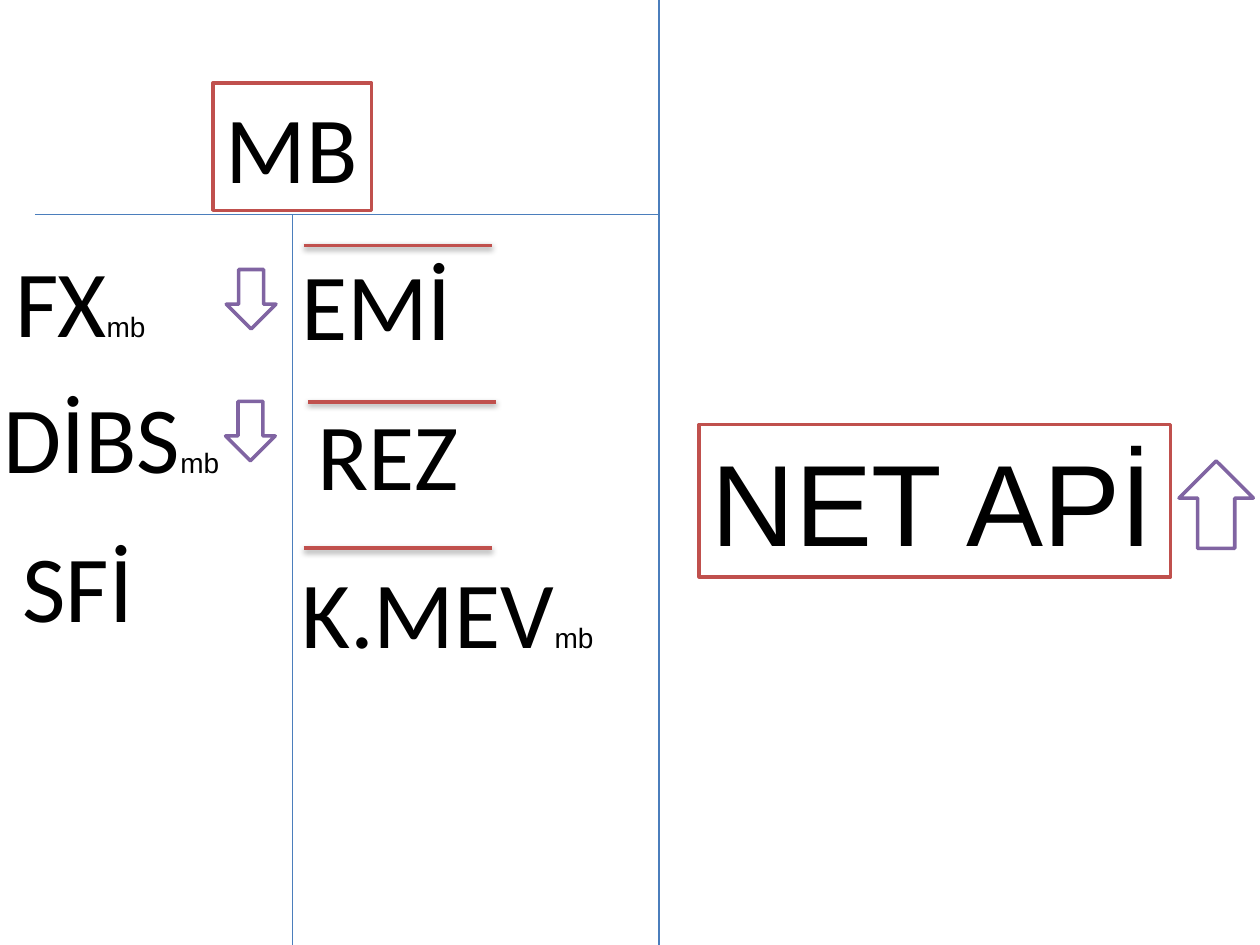
from dataclasses import dataclass

from lxml import etree
from pptx import Presentation
from pptx.dml.color import RGBColor
from pptx.enum.shapes import MSO_CONNECTOR, MSO_SHAPE
from pptx.enum.text import MSO_ANCHOR, MSO_AUTO_SIZE, PP_ALIGN
from pptx.oxml import parse_xml
from pptx.oxml.ns import nsdecls, qn
from pptx.util import Pt

STRAIGHT = MSO_CONNECTOR.STRAIGHT
RECTANGLE, UP_ARROW = MSO_SHAPE.RECTANGLE, MSO_SHAPE.UP_ARROW
TOP, FIT = MSO_ANCHOR.TOP, MSO_AUTO_SIZE.SHAPE_TO_FIT_TEXT
LEFT, RIGHT = PP_ALIGN.LEFT, PP_ALIGN.RIGHT

BLUE, RED, PURPLE = "4B7EBC", "C0504D", "8064A2"
BLACK, WHITE = "000000", "FFFFFF"
SLIDE_W, SLIDE_H = 720, 540
ACCOUNT_TOP, ACCOUNT_MID, ACCOUNT_RIGHT = 122.5, 167, 376.5
BAR_WIDTH = 107.5
SHADOW = (
    f'<a:effectLst {nsdecls("a")}>'
    '<a:outerShdw blurRad="40000" dist="20000" dir="5400000" rotWithShape="0">'
    f'<a:srgbClr val="{BLACK}"><a:alpha val="38000"/></a:srgbClr>'
    "</a:outerShdw></a:effectLst>"
)


@dataclass
class Label:
    text: str
    x: float
    y: float
    w: float
    h: float = 72.7
    subscript: str = ""
    font: str = "Calibri"
    size: int = 54
    align: PP_ALIGN = LEFT
    filled: bool = False
    border: str = ""


@dataclass
class Arrow:
    x: float
    y: float
    w: float
    h: float
    rotation: int = 0


LABELS = [
    Label("FX", 1.5, 135.4, 90, subscript="mb"),
    Label("DİBS", -5, 213, 139, subscript="mb"),
    Label("SFİ", 5.8, 298, 78.5),
    Label("EMİ", 165, 136.8, 101.5),
    Label("REZ", 173.5, 222.5, 95.8, align=RIGHT, filled=True),
    Label("K.MEV", 165, 313.2, 183, subscript="mb"),
    Label("MB", 121.7, 47.5, 90.7, filled=True, border=RED),
    Label("NET APİ", 399.6, 242.6, 269.3, 87.1, font="Arial", size=66,
          filled=True, border=RED),
]
ARROWS = [
    Arrow(129.3, 154, 28.4, 34, 180),
    Arrow(128.9, 229.3, 28.4, 34, 180),
    Arrow(673.7, 263.4, 42.5, 50),
]
BARS = [(173.5, 140.2), (176, 229.6), (173.5, 313.2)]


def rgb(color: str) -> RGBColor:
    return RGBColor.from_string(color)


def add_line(s, x1: float, y1: float, x2: float, y2: float,
             color: str, width: float, shadow: bool = False) -> None:
    line = s.shapes.add_connector(STRAIGHT, Pt(x1), Pt(y1), Pt(x2), Pt(y2))
    line.line.color.rgb = rgb(color)
    line.line.width = Pt(width)
    sp_pr = line._element.spPr
    if shadow:
        sp_pr.append(parse_xml(SHADOW))
    else:
        etree.SubElement(sp_pr, qn("a:effectLst"))


def add_outlined(s, kind: MSO_SHAPE, x: float, y: float, w: float, h: float,
                 color: str):
    """Add a white shape, without a line when color is empty."""
    sp = s.shapes.add_shape(kind, Pt(x), Pt(y), Pt(w), Pt(h))
    sp.shadow.inherit = False
    sp.fill.solid()
    sp.fill.fore_color.rgb = rgb(WHITE)
    if color:
        sp.line.color.rgb = rgb(color)
        sp.line.width = Pt(2)
    else:
        sp.line.fill.background()
    return sp


def add_label(s, label: Label) -> None:
    box = (label.x, label.y, label.w, label.h)
    if label.filled:
        sp = add_outlined(s, RECTANGLE, *box, label.border)
    else:
        sp = s.shapes.add_textbox(*map(Pt, box))
    tf = sp.text_frame
    tf.word_wrap = False
    tf.auto_size = FIT
    tf.vertical_anchor = TOP
    p = tf.paragraphs[0]
    p.alignment = label.align
    p.font.color.rgb = rgb(BLACK)
    parts = [(label.text, label.font, label.size), (label.subscript, "Arial", 16)]
    for text, font, size in parts:
        if text:
            r = p.add_run()
            r.text = text
            r.font.name = font
            r.font.size = Pt(size)
            r.font.color.rgb = rgb(BLACK)


def add_arrow(s, arrow: Arrow) -> None:
    sp = add_outlined(s, UP_ARROW, arrow.x, arrow.y, arrow.w, arrow.h, PURPLE)
    sp.rotation = arrow.rotation


def main() -> None:
    prs = Presentation()
    prs.slide_width, prs.slide_height = Pt(SLIDE_W), Pt(SLIDE_H)
    s = prs.slides.add_slide(prs.slide_layouts[6])
    add_line(s, 20, ACCOUNT_TOP, ACCOUNT_RIGHT, ACCOUNT_TOP, BLUE, 0.75)
    add_line(s, ACCOUNT_MID, ACCOUNT_TOP, ACCOUNT_MID, SLIDE_H, BLUE, 0.75)
    for label in LABELS:
        add_label(s, label)
    add_line(s, ACCOUNT_RIGHT, 0, ACCOUNT_RIGHT, SLIDE_H, BLUE, 0.75)
    for arrow in ARROWS:
        add_arrow(s, arrow)
    for x, y in BARS:
        add_line(s, x, y, x + BAR_WIDTH, y, RED, 2, shadow=True)
    prs.save("out.pptx")


if __name__ == "__main__":
    main()
